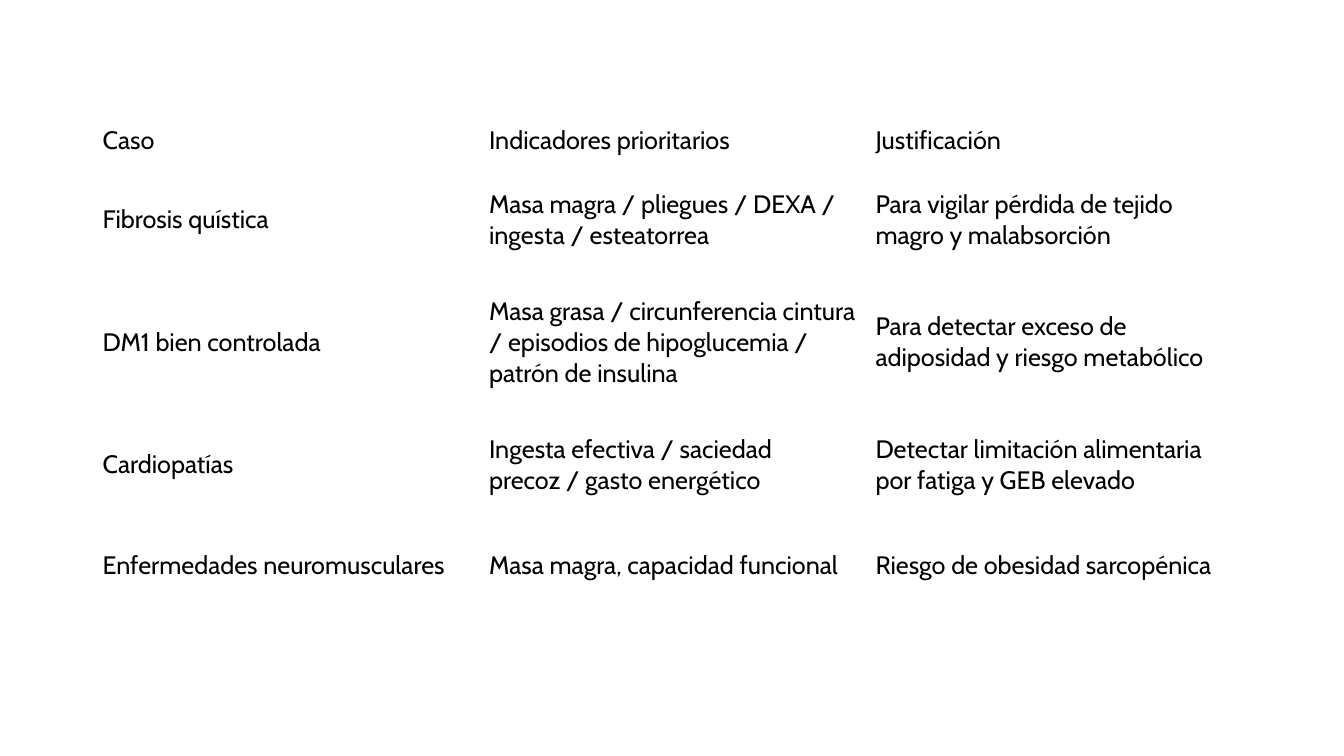
import pptx
import pptx.dml.color
import pptx.enum.text
import pptx.util

Cm = pptx.util.Cm
BLACK = pptx.dml.color.RGBColor(0, 0, 0)
FONT = "Cabin"

CASES = [
    ("Caso", "Indicadores prioritarios", "Justificación"),
    ("Fibrosis quística",
     "Masa magra / pliegues / DEXA / ingesta / esteatorrea",
     "Para vigilar pérdida de tejido magro y malabsorción"),
    ("DM1 bien controlada",
     "Masa grasa / circunferencia cintura / episodios de hipoglucemia / patrón de insulina",
     "Para detectar exceso de adiposidad y riesgo metabólico"),
    ("Cardiopatías",
     "Ingesta efectiva / saciedad precoz / gasto energético",
     "Detectar limitación alimentaria por fatiga y GEB elevado"),
    ("Enfermedades neuromusculares",
     "Masa magra, capacidad funcional",
     "Riesgo de obesidad sarcopénica"),
]
ROW_HEIGHTS = [1.45, 2.54, 3.63, 2.54, 2.54]
COLUMN_WIDTH = 9.74
LEFT, TOP = 2.33, 2.82


def write_cell(cell, text, size=18, color=BLACK, bold=False):
    cell.fill.background()
    cell.vertical_anchor = pptx.enum.text.MSO_ANCHOR.MIDDLE
    run = cell.text_frame.paragraphs[0].add_run()
    run.text = text
    run.font.name = FONT
    run.font.size = pptx.util.Pt(size)
    run.font.bold = bold
    run.font.color.rgb = color


def add_case_table(slide):
    column_count = len(CASES[0])
    table = slide.shapes.add_table(
        len(CASES), column_count, Cm(LEFT), Cm(TOP),
        Cm(COLUMN_WIDTH * column_count), Cm(sum(ROW_HEIGHTS))).table
    table.first_row = False
    table.horz_banding = False
    for column in table.columns:
        column.width = Cm(COLUMN_WIDTH)
    for row, height, texts in zip(table.rows, ROW_HEIGHTS, CASES):
        row.height = Cm(height)
        for cell, text in zip(row.cells, texts):
            write_cell(cell, text)


def main():
    presentation = pptx.Presentation()
    presentation.slide_width = Cm(33.87)
    presentation.slide_height = Cm(19.05)
    blank_layout = presentation.slide_layouts[6]
    add_case_table(presentation.slides.add_slide(blank_layout))
    presentation.save("out.pptx")


if __name__ == "__main__":
    main()
